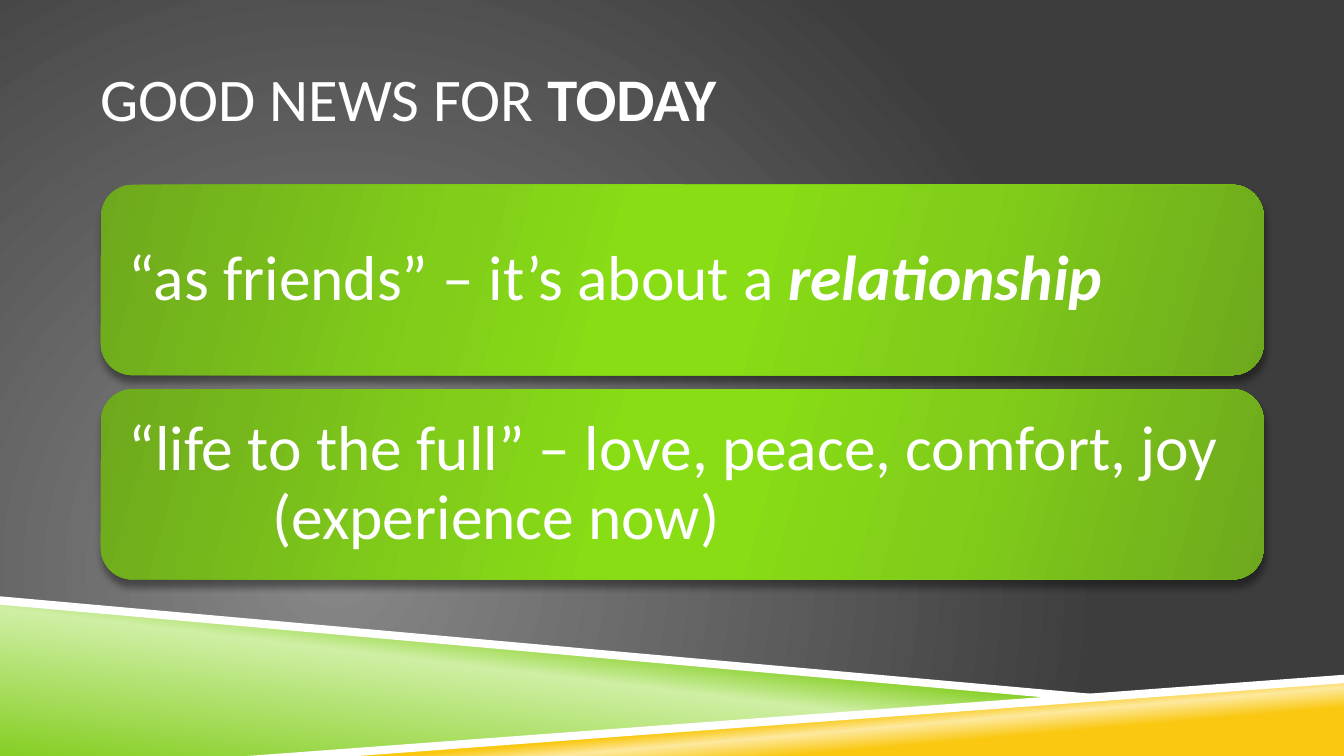
from lxml.etree import SubElement
from pptx import Presentation
from pptx.dml.color import RGBColor
from pptx.enum.shapes import MSO_SHAPE
from pptx.enum.text import MSO_ANCHOR, MSO_AUTO_SIZE, PP_ALIGN
from pptx.oxml.ns import qn
from pptx.util import Pt

WHITE = RGBColor(0xFF, 0xFF, 0xFF)
BLACK = RGBColor(0x00, 0x00, 0x00)
LIGHT_GREY = RGBColor(0x87, 0x87, 0x87)
DARK_GREY = RGBColor(0x3D, 0x3D, 0x3D)
GREEN = RGBColor(0x86, 0xCE, 0x24)
PALE_GREEN = RGBColor(0xCF, 0xEF, 0xA4)
CARD_EDGE = RGBColor(0x6E, 0xA9, 0x1D)
CARD_MIDDLE = RGBColor(0x81, 0xCD, 0x1A)
CARD_CENTRE = RGBColor(0x88, 0xDD, 0x15)
YELLOW = RGBColor(0xFA, 0xC8, 0x10)
PALE_YELLOW = RGBColor(0xFD, 0xE9, 0x9F)

CARD_STOPS = [(0, CARD_EDGE), (30, CARD_MIDDLE), (45, CARD_CENTRE),
              (55, CARD_CENTRE), (73, CARD_MIDDLE), (100, CARD_EDGE)]
CARD_LEFT, CARD_TOP, CARD_WIDTH, CARD_HEIGHT, CARD_PITCH = 54, 99, 623, 102, 109.5
HANGING_INDENT = 77


def add_element(parent, tag, **attributes):
    """Append a drawing element with the given attributes."""
    return SubElement(parent, qn(tag), {key: str(value) for key, value in attributes.items()})


def add_color(parent, color):
    """Append an RGB colour element."""
    return add_element(parent, "a:srgbClr", val=color)


def set_gradient(fill, owner, stops, angle=None):
    """Apply a linear gradient, or a circular one when no angle is given."""
    fill.gradient()
    gradient = next(owner.iter(qn("a:gradFill")))
    for child in list(gradient):
        gradient.remove(child)
    stop_list = add_element(gradient, "a:gsLst")
    for position, color in stops:
        add_color(add_element(stop_list, "a:gs", pos=position * 1000), color)
    if angle is None:
        circle = add_element(gradient, "a:path", path="circle")
        add_element(circle, "a:fillToRect", l=50000, t=100000, r=100000, b=50000)
    else:
        add_element(gradient, "a:lin", ang=angle * 60000, scaled=0)


class SlideBuilder:
    """Holds the text style and the current slide."""

    font_name = "Calibri"
    font_color = WHITE

    def __init__(self, presentation):
        """Add a title-only slide."""
        self.slide = presentation.slides.add_slide(presentation.slide_layouts[5])

    def background(self, stops):
        """Fill the background with a circular gradient."""
        set_gradient(self.slide.background.fill, self.slide.element, stops)

    def add_text(self, shape, runs, size):
        """Add one left-aligned paragraph of (text, bold, italic) runs."""
        frame = shape.text_frame
        frame.word_wrap = True
        frame.auto_size = MSO_AUTO_SIZE.NONE
        frame.vertical_anchor = MSO_ANCHOR.MIDDLE
        paragraph = frame.paragraphs[0]
        paragraph.alignment = PP_ALIGN.LEFT
        paragraph.font.name = self.font_name
        paragraph.font.size = Pt(size)
        paragraph.font.color.rgb = self.font_color
        for text, bold, italic in runs:
            run = paragraph.add_run()
            run.text = text
            run.font.bold = bold
            run.font.italic = italic
        return paragraph

    def title(self, runs):
        """Place and fill the title placeholder."""
        title = self.slide.shapes.title
        title.left, title.top, title.width, title.height = Pt(54), Pt(18), Pt(612), Pt(68)
        title.text_frame.margin_left = title.text_frame.margin_right = 0
        self.add_text(title, runs, 32.4)

    def band(self, points, stops, angle=0):
        """Draw a polygon with a gradient, or a plain colour for a single stop."""
        corners = [(Pt(x), Pt(y)) for x, y in points]
        builder = self.slide.shapes.build_freeform(*corners[0])
        builder.add_line_segments(corners[1:], close=True)
        shape = builder.convert_to_shape()
        shape.shadow.inherit = False
        shape.line.fill.background()
        if len(stops) == 1:
            shape.fill.solid()
            shape.fill.fore_color.rgb = stops[0][1]
        else:
            set_gradient(shape.fill, shape.element, stops, angle)

    def card(self, top, runs):
        """Draw a rounded gradient card with a soft shadow and its text."""
        shape = self.slide.shapes.add_shape(
            MSO_SHAPE.ROUNDED_RECTANGLE, Pt(CARD_LEFT), Pt(top), Pt(CARD_WIDTH), Pt(CARD_HEIGHT))
        set_gradient(shape.fill, shape.element, CARD_STOPS, 16)
        shape.line.fill.background()
        shape.shadow.inherit = False
        effects = next(shape.element.iter(qn("a:effectLst")))
        shadow = add_element(effects, "a:outerShdw", blurRad=Pt(4), dist=Pt(3.3),
                             dir=90 * 60000, rotWithShape=0)
        add_element(add_color(shadow, BLACK), "a:alpha", val=40000)
        shape.text_frame.margin_left = shape.text_frame.margin_right = Pt(10)
        paragraph = self.add_text(shape, runs, 34)
        paragraph.line_spacing = 0.9
        properties = paragraph._p.get_or_add_pPr()
        properties.set("marL", str(Pt(HANGING_INDENT)))
        properties.set("indent", str(-Pt(HANGING_INDENT)))


def main():
    """Build and save the slide."""
    presentation = Presentation()
    presentation.slide_width, presentation.slide_height = Pt(720), Pt(405)
    builder = SlideBuilder(presentation)
    builder.background([(0, LIGHT_GREY), (100, DARK_GREY)])
    builder.band([(0, 322.5), (570, 373.5), (144, 405), (0, 405)],
                 [(0, GREEN), (52, PALE_GREEN), (66, GREEN)], 277)
    builder.band([(142.5, 405), (720, 363), (720, 405)],
                 [(28, YELLOW), (40, PALE_YELLOW), (48, YELLOW)], 265)
    builder.band([(0, 319.5), (0, 324), (569, 374.5), (599, 373)], [(0, WHITE)])
    builder.band([(720, 361.5), (132.5, 405), (191.5, 405), (720, 366)], [(0, WHITE)])
    builder.title([("GOOD NEWS FOR ", False, False), ("TODAY", True, False)])
    cards = [
        [("“as friends” – it’s about a ", False, False), ("relationship", True, True)],
        [("“life to the full” – love, peace, comfort, joy (experience now)", False, False)],
    ]
    for index, runs in enumerate(cards):
        builder.card(CARD_TOP + index * CARD_PITCH, runs)
    presentation.save("out.pptx")


if __name__ == "__main__":
    main()
